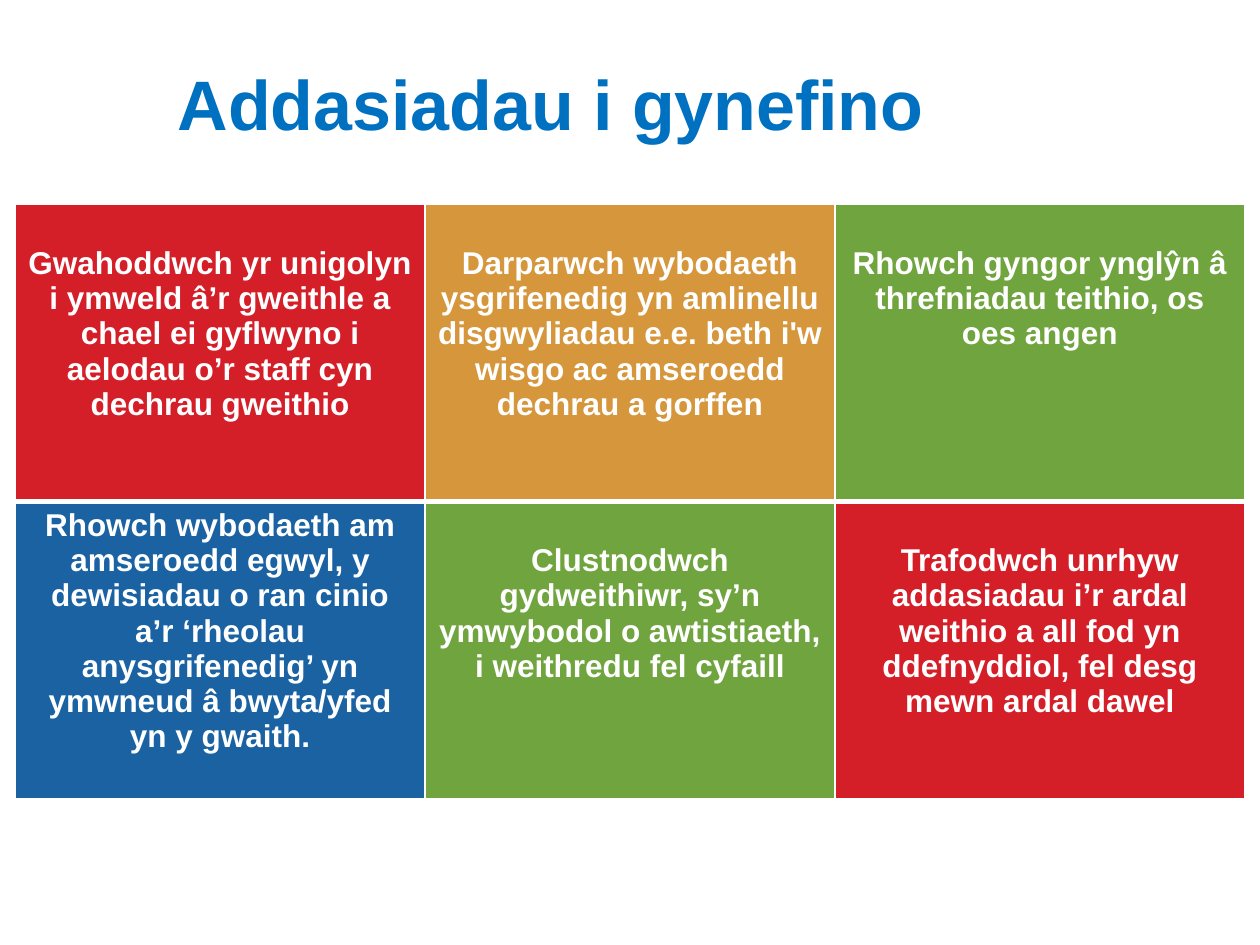
from lxml.etree import SubElement
from pptx import Presentation
from pptx.dml.color import RGBColor
from pptx.enum.text import MSO_ANCHOR, MSO_AUTO_SIZE, PP_ALIGN
from pptx.oxml.ns import qn
from pptx.util import Inches, Pt

FONT = "Arial"
WHITE = "FFFFFF"
RED, AMBER, GREEN, BLUE = "D41F29", "D5963C", "70A43E", "1A62A2"
SLIDE_WIDTH, SLIDE_HEIGHT = Inches(10), Inches(7.5)
LEFT = Inches(0.12)
TITLE_BOX = (LEFT, Inches(0.46), Inches(8.5), Inches(0.69))
TABLE_BOX = (LEFT, Inches(1.62), Inches(9.76), Inches(4.72))
TOP_MARGIN = Inches(0.05)
LINE_HEIGHT = Inches(0.28)

ADJUSTMENTS = [
    [
        ("Gwahoddwch yr unigolyn i ymweld â’r gweithle a chael ei gyflwyno "
         "i aelodau o’r staff cyn dechrau gweithio", RED, 1),
        ("Darparwch wybodaeth ysgrifenedig yn amlinellu disgwyliadau e.e. "
         "beth i'w wisgo ac amseroedd dechrau a gorffen", AMBER, 1),
        ("Rhowch gyngor ynglŷn â threfniadau teithio, os oes angen", GREEN, 1),
    ],
    [
        ("Rhowch wybodaeth am amseroedd egwyl, y dewisiadau o ran cinio a’r "
         "‘rheolau anysgrifenedig’ yn ymwneud â bwyta/yfed yn y gwaith.", BLUE, 0),
        ("Clustnodwch gydweithiwr, sy’n ymwybodol o awtistiaeth, "
         "i weithredu fel cyfaill", GREEN, 1),
        ("Trafodwch unrhyw addasiadau i’r ardal weithio a all fod yn "
         "ddefnyddiol, fel desg mewn ardal dawel", RED, 1),
    ],
]


def color(value):
    return RGBColor.from_string(value)


def write_centred(text_frame, text, size, text_color):
    paragraph = text_frame.paragraphs[0]
    paragraph.alignment = PP_ALIGN.CENTER
    run = paragraph.add_run()
    run.text = text
    run.font.name = FONT
    run.font.size = Pt(size)
    run.font.bold = True
    run.font.color.rgb = color(text_color)


def add_title(slide, box):
    text_frame = slide.shapes.add_textbox(*box).text_frame
    text_frame.word_wrap = True
    text_frame.auto_size = MSO_AUTO_SIZE.SHAPE_TO_FIT_TEXT
    text_frame.vertical_anchor = MSO_ANCHOR.MIDDLE
    text_frame.margin_left = text_frame.margin_right = text_frame.margin_bottom = 0
    text_frame.margin_top = Inches(0.01)
    write_centred(text_frame, "Addasiadau i gynefino", 40, "0070C0")


def set_borders(cell, top, bottom):
    properties = cell._tc.get_or_add_tcPr()
    for side, width in (("L", 1), ("R", 1), ("T", top), ("B", bottom)):
        line = SubElement(properties, qn(f"a:ln{side}"), w=str(Pt(width)))
        fill = SubElement(line, qn("a:solidFill"))
        SubElement(fill, qn("a:srgbClr"), val=WHITE)


def add_adjustments(slide, box):
    row_count, column_count = len(ADJUSTMENTS), len(ADJUSTMENTS[0])
    table = slide.shapes.add_table(row_count, column_count, *box).table
    for row_index, row in enumerate(ADJUSTMENTS):
        top, bottom = (1, 3) if row_index == 0 else (3, 1)
        for column_index, (text, fill_color, lines_above) in enumerate(row):
            cell = table.cell(row_index, column_index)
            set_borders(cell, top, bottom)
            cell.fill.solid()
            cell.fill.fore_color.rgb = color(fill_color)
            cell.margin_top = TOP_MARGIN + lines_above * LINE_HEIGHT
            write_centred(cell.text_frame, text, 18, WHITE)


def main():
    presentation = Presentation()
    presentation.slide_width = SLIDE_WIDTH
    presentation.slide_height = SLIDE_HEIGHT
    slide = presentation.slides.add_slide(presentation.slide_layouts[6])
    add_title(slide, TITLE_BOX)
    add_adjustments(slide, TABLE_BOX)
    presentation.save("out.pptx")


if __name__ == "__main__":
    main()
